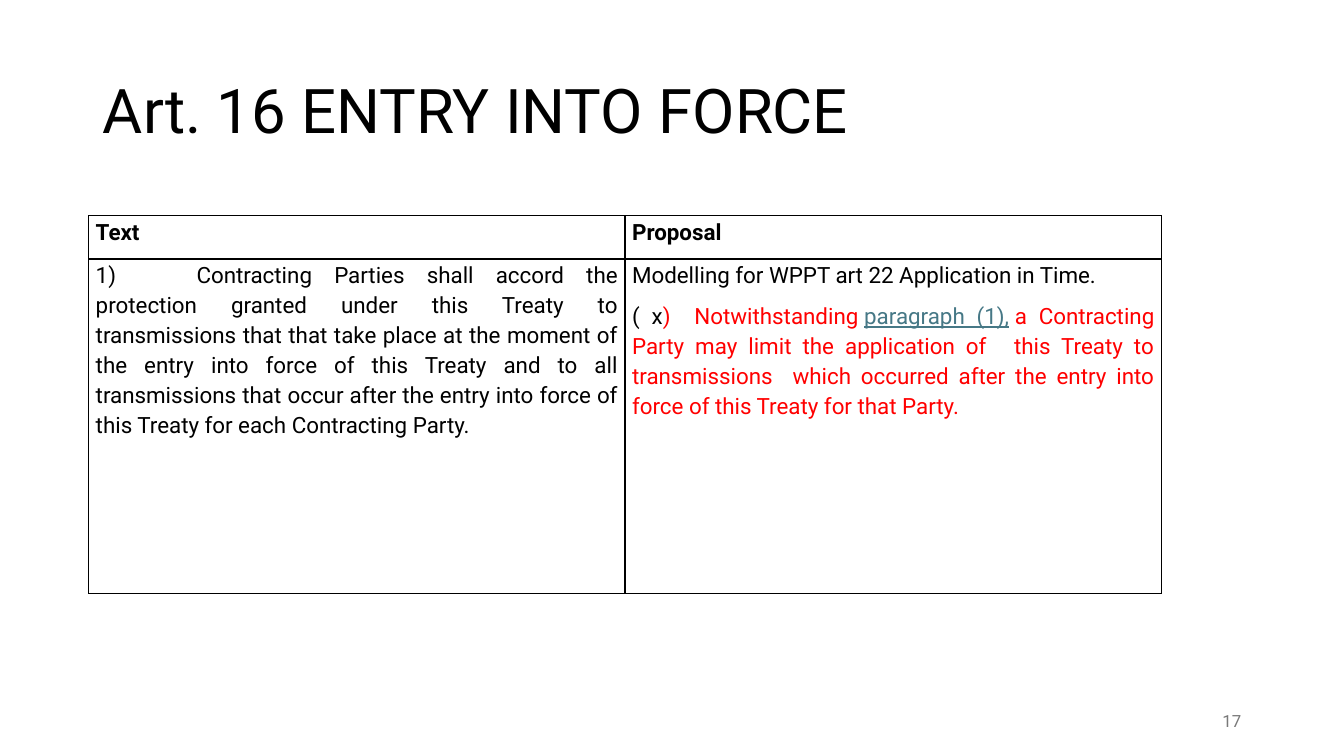
from lxml import etree
from pptx import Presentation
from pptx.dml.color import RGBColor
from pptx.enum.text import MSO_ANCHOR, PP_ALIGN
from pptx.oxml.ns import qn
from pptx.util import Emu, Pt

PX = 9144
MID, TOP = MSO_ANCHOR.MIDDLE, MSO_ANCHOR.TOP
LEFT, RIGHT, JUST = PP_ALIGN.LEFT, PP_ALIGN.RIGHT, PP_ALIGN.JUSTIFY
BLACK, RED, TEAL, GREY = "000000", "FF0000", "467886", "797979"
HARD = chr(160)


def color(code):
    return RGBColor.from_string(code)


def write(para, runs, size, look, bold=False):
    for name, value in look.items():
        setattr(para, name, value)
    for text, code in runs:
        run = para.add_run()
        run.text = text
        style = {"name": "Roboto", "size": Pt(size), "bold": bold,
                 "underline": code == TEAL}
        for name, value in style.items():
            setattr(run.font, name, value)
        run.font.color.rgb = color(code)


deck = Presentation()
deck.slide_width, deck.slide_height = Emu(1333 * PX), Emu(750 * PX)
slide = deck.slides.add_slide(deck.slide_layouts[5])

title = slide.shapes.title
page = slide.shapes.add_textbox(0, 0, 0, 0)
labels = [
    (title, (92, 40, 1150, 145), "Art. 16 ENTRY INTO FORCE", 44, BLACK,
     {"alignment": LEFT, "line_spacing": 0.9}),
    (page, (941, 695, 300, 40), "17", 12, GREY, {"alignment": RIGHT}),
]
for shape, box, text, size, code, look in labels:
    for name, value in zip(("left", "top", "width", "height"), box):
        setattr(shape, name, Emu(value * PX))
    shape.text_frame.word_wrap = True
    shape.text_frame.vertical_anchor = MID
    write(shape.text_frame.paragraphs[0], [(text, code)], size, look)

rows = [
    [[[("Text", BLACK)]], [[("Proposal", BLACK)]]],
    [
        [[("1)\tContracting Parties shall accord the protection granted under "
           "this Treaty to transmissions that that take place at the moment of "
           "the entry into force of this Treaty and to all transmissions that "
           "occur after the entry into force of this Treaty for each "
           "Contracting Party.", BLACK)]],
        [
            [("Modelling for WPPT art 22 Application in Time.", BLACK)],
            [("( x", BLACK),
             (")  Notwithstanding" + HARD, RED),
             ("paragraph (1),", TEAL),
             (HARD + "a Contracting Party may limit the application of" + HARD
              + "  this Treaty to transmissions  which occurred after the "
              "entry into force of this Treaty for that Party.", RED)],
        ],
    ],
]
frame = slide.shapes.add_table(2, 2, 88 * PX, 214 * PX, 1064 * PX, 375 * PX)
table = frame.table
table.first_row = table.horz_banding = False
for row, high in zip(table.rows, (43, 332)):
    row.height = Emu(high * PX)
pads = {"margin_left": 7, "margin_right": 7, "margin_top": 0, "margin_bottom": 0}

for i, row in enumerate(rows):
    for j, paras in enumerate(row):
        cell = table.cell(i, j)
        cell.fill.background()
        cell.vertical_anchor = TOP
        for name, value in pads.items():
            setattr(cell, name, Emu(value * PX))
        props = cell._tc.get_or_add_tcPr()
        for k, side in enumerate(("lnL", "lnR", "lnT", "lnB")):
            line = etree.Element(qn("a:" + side), w=str(Pt(1)))
            fill = etree.SubElement(line, qn("a:solidFill"))
            etree.SubElement(fill, qn("a:srgbClr"), val=BLACK)
            props.insert(k, line)
        look = {"alignment": JUST if i else LEFT, "line_spacing": 1.15,
                "space_after": Pt(8)}
        for n, runs in enumerate(paras):
            body = cell.text_frame
            para = body.add_paragraph() if n else body.paragraphs[0]
            write(para, runs, 16, look, bold=i == 0)
            if "\t" in para.text:
                tabs = etree.SubElement(para._p.get_or_add_pPr(), qn("a:tabLst"))
                etree.SubElement(tabs, qn("a:tab"), pos=str(100 * PX), algn="l")

deck.save("out.pptx")
